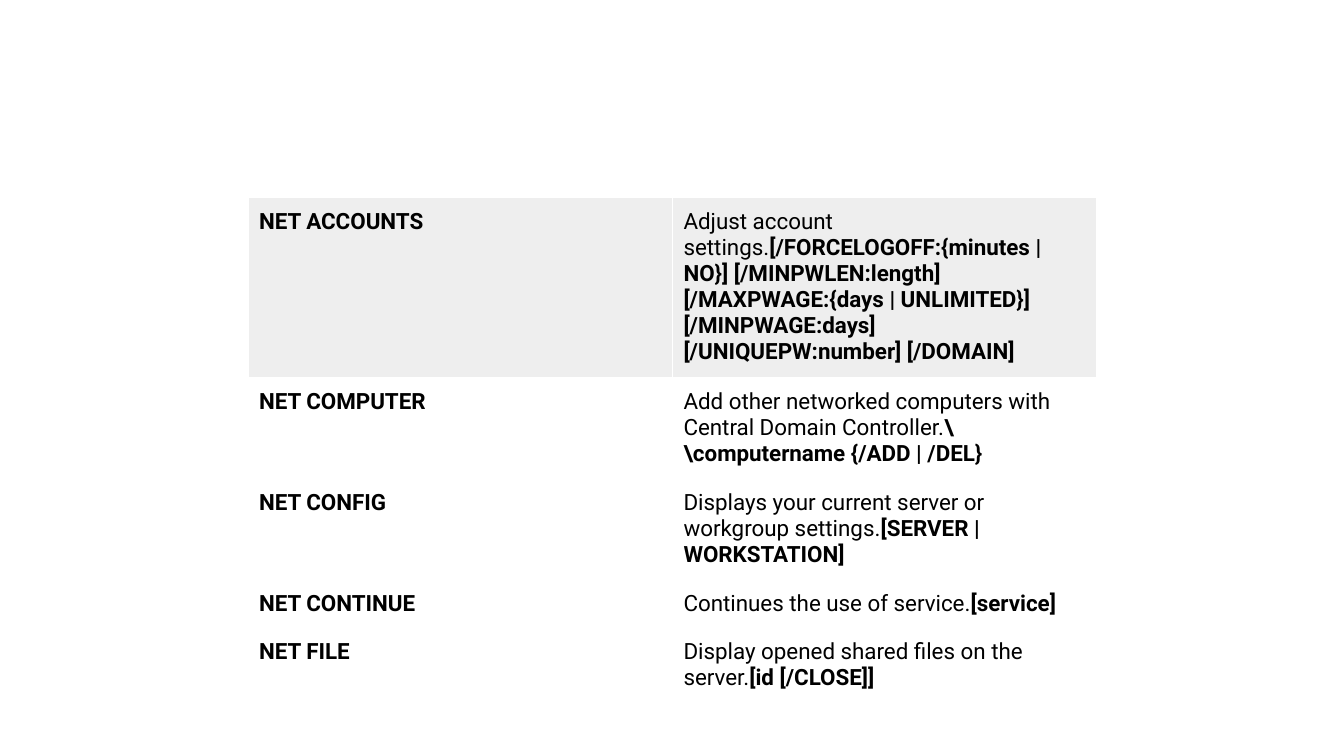
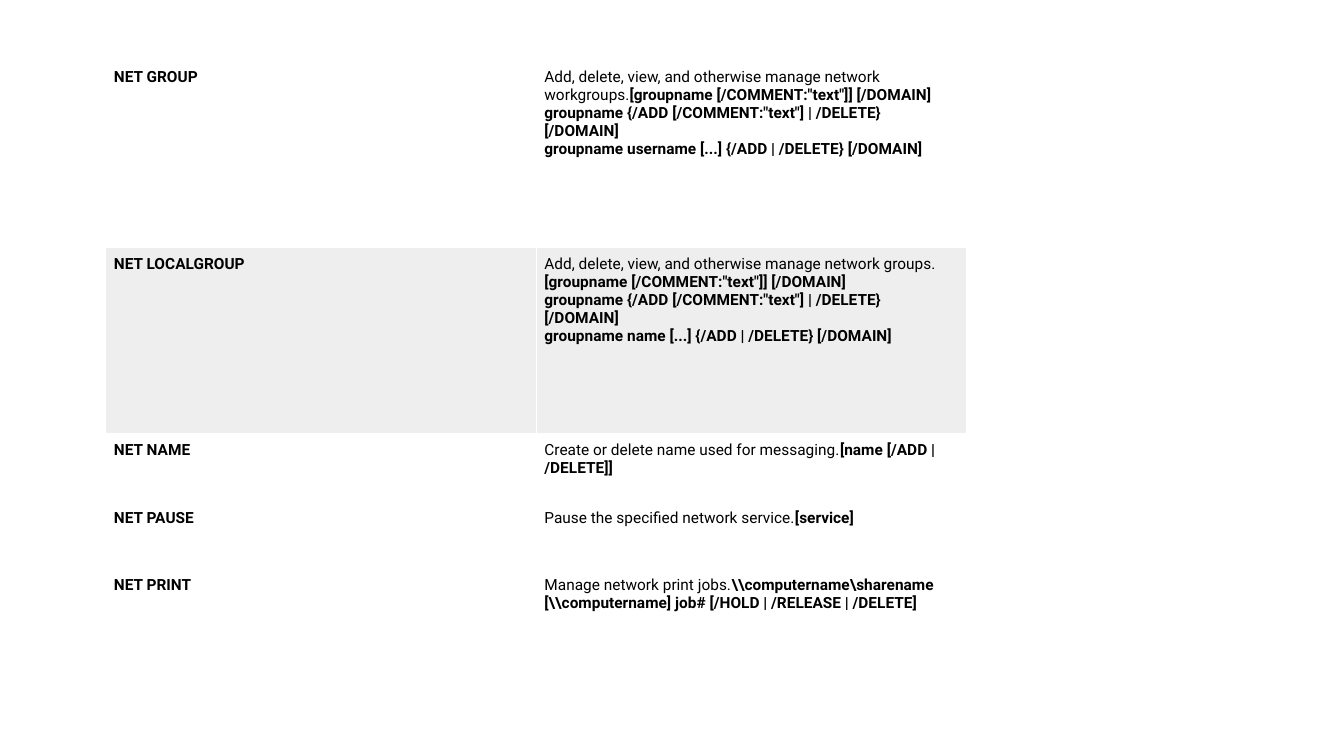
from pptx import Presentation
from pptx.dml.color import RGBColor
from pptx.util import Inches, Pt

BLACK = RGBColor(0x00, 0x00, 0x00)
WHITE = RGBColor(0xFF, 0xFF, 0xFF)
BAND = RGBColor(0xEE, 0xEE, 0xEE)
FONT = "Roboto"

# Each entry: command, description, syntax lines, row height in inches
BASIC_COMMANDS = [
    ("NET ACCOUNTS", "Adjust account settings.",
     ["[/FORCELOGOFF:{minutes | NO}] [/MINPWLEN:length]",
      "[/MAXPWAGE:{days | UNLIMITED}] [/MINPWAGE:days]",
      "[/UNIQUEPW:number] [/DOMAIN]"], 1.79),
    ("NET COMPUTER",
     "Add other networked computers with Central Domain Controller.",
     [r"\\computername {/ADD | /DEL}"], 1),
    ("NET CONFIG", "Displays your current server or workgroup settings.",
     ["[SERVER | WORKSTATION]"], 1),
    ("NET CONTINUE", "Continues the use of service.", ["[service]"], 0.48),
    ("NET FILE", "Display opened shared files on the server.",
     ["[id [/CLOSE]]"], 0.74),
]

GROUP_SYNTAX = [
    '[groupname [/COMMENT:"text"]] [/DOMAIN]',
    'groupname {/ADD [/COMMENT:"text"] | /DELETE} [/DOMAIN]',
]
GROUP_COMMANDS = [
    ("NET GROUP", "Add, delete, view, and otherwise manage network workgroups.",
     GROUP_SYNTAX + ["groupname username [...] {/ADD | /DELETE} [/DOMAIN]"], 1.85),
    ("NET LOCALGROUP", "Add, delete, view, and otherwise manage network groups.",
     GROUP_SYNTAX + ["groupname name [...] {/ADD | /DELETE} [/DOMAIN]"], 1.85),
    ("NET NAME", "Create or delete name used for messaging.",
     ["[name [/ADD | /DELETE]]"], 0.67),
    ("NET PAUSE", "Pause the specified network service.", ["[service]"], 0.67),
    ("NET PRINT", "Manage network print jobs.",
     [r"\\computername\sharename",
      r"[\\computername] job# [/HOLD | /RELEASE | /DELETE]"], 1.14),
]


def style_cell(cell, fill, size, margin):
    """Format an empty cell and return its paragraph."""
    cell.fill.solid()
    cell.fill.fore_color.rgb = fill
    cell.margin_left = cell.margin_right = Inches(margin)
    cell.margin_top = cell.margin_bottom = Inches(margin)
    paragraph = cell.text_frame.paragraphs[0]
    paragraph.font.name = FONT
    paragraph.font.size = Pt(size)
    paragraph.font.color.rgb = BLACK
    return paragraph


def add_text(paragraph, text, bold):
    run = paragraph.add_run()
    run.text = text
    run.font.bold = bold


def add_command_slide(prs, commands, banded, left, top, width, size, margin):
    """Add a slide with a two-column command table; banded names the grey row."""
    slide = prs.slides.add_slide(prs.slide_layouts[6])
    height = sum(command[-1] for command in commands)
    table = slide.shapes.add_table(
        len(commands), 2, Inches(left), Inches(top), Inches(width), Inches(height)
    ).table
    table.first_row = table.horz_banding = False
    for column in table.columns:
        column.width = Inches(width / 2)

    for row, (name, description, syntax, row_height) in zip(table.rows, commands):
        row.height = Inches(row_height)
        fill = BAND if name == banded else WHITE
        name_text, usage_text = (
            style_cell(cell, fill, size, margin) for cell in row.cells)
        add_text(name_text, name, True)
        add_text(usage_text, description, False)
        for index, line in enumerate(syntax):
            if index:
                usage_text.add_line_break()
            add_text(usage_text, line, True)


def main():
    prs = Presentation()
    prs.slide_width, prs.slide_height = Inches(13.33), Inches(7.5)
    add_command_slide(prs, BASIC_COMMANDS, "NET ACCOUNTS",
                      left=2.46, top=1.96, width=8.42, size=16, margin=0.11)
    add_command_slide(prs, GROUP_COMMANDS, "NET LOCALGROUP",
                      left=1.05, top=0.6, width=8.54, size=11, margin=0.08)
    prs.save("out.pptx")


if __name__ == "__main__":
    main()
